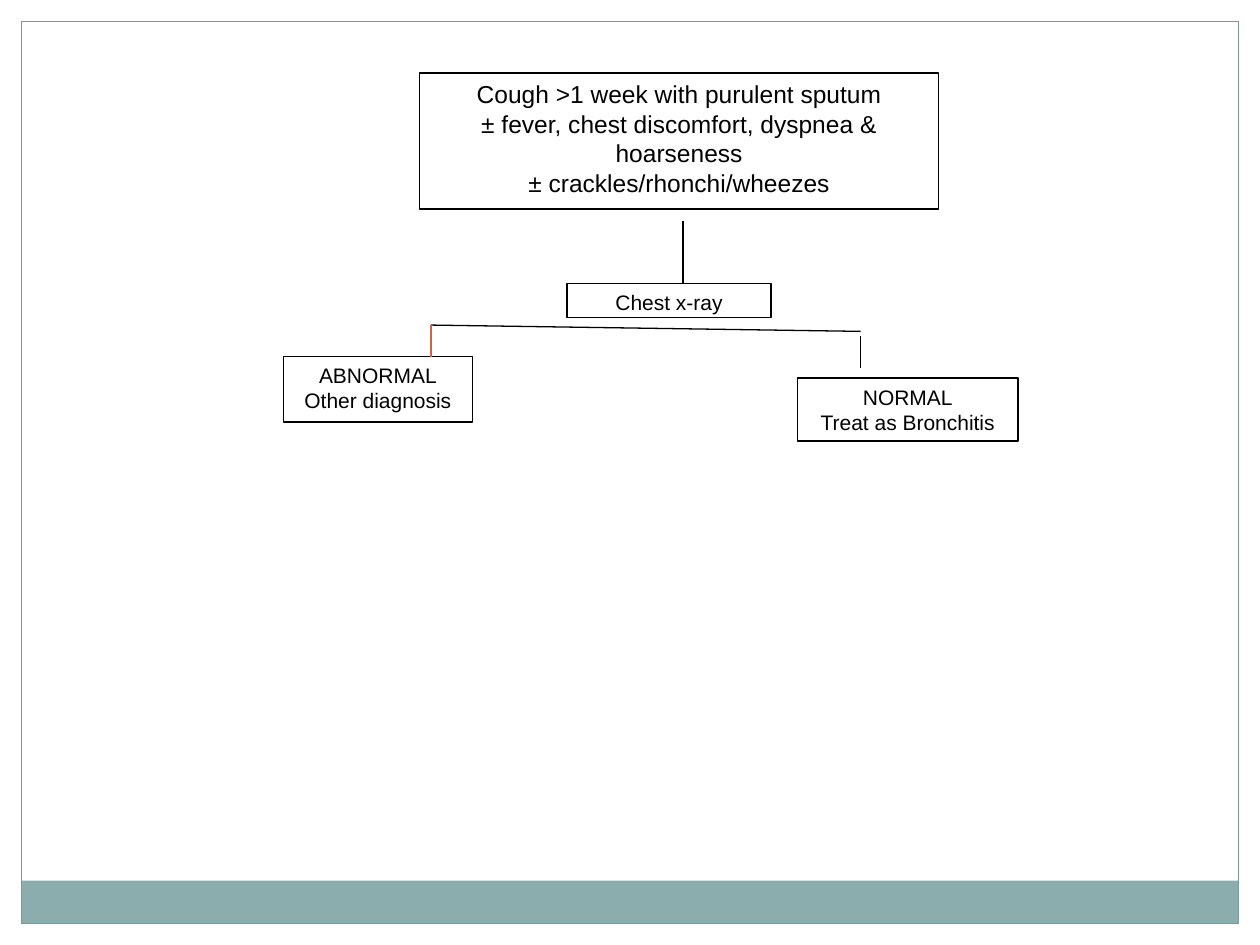
from dataclasses import dataclass

from lxml import etree
from pptx import Presentation
from pptx.dml.color import RGBColor
from pptx.enum.shapes import MSO_CONNECTOR, MSO_SHAPE
from pptx.enum.text import MSO_ANCHOR, PP_ALIGN
from pptx.oxml.ns import qn
from pptx.util import Inches, Pt

RECT = MSO_SHAPE.RECTANGLE
STRAIGHT = MSO_CONNECTOR.STRAIGHT
CENTER = PP_ALIGN.CENTER
TOP = MSO_ANCHOR.TOP


@dataclass(frozen=True)
class Theme:
    font: str = "Arial"
    ink: str = "000000"
    paper: str = "FFFFFF"
    band: str = "8CADAE"
    frame: str = "7C999A"
    accent: str = "D16349"
    heading: int = 14
    body: int = 12
    line: float = 0.75


THEME = Theme()


def add_rect(slide, box, fill=None, line=None):
    sp = slide.shapes.add_shape(RECT, *map(Inches, box))
    sp.shadow.inherit = False
    if fill:
        sp.fill.solid()
        sp.fill.fore_color.rgb = RGBColor.from_string(fill)
    else:
        sp.fill.background()
    if line:
        sp.line.color.rgb = RGBColor.from_string(line)
        sp.line.width = Pt(THEME.line)
    else:
        sp.line.fill.background()
    return sp


def add_line(slide, start, end, color=THEME.ink):
    cn = slide.shapes.add_connector(STRAIGHT, *map(Inches, (*start, *end)))
    cn.line.color.rgb = RGBColor.from_string(color)
    cn.line.width = Pt(THEME.line)
    etree.SubElement(cn._element.spPr, qn("a:effectLst"))


def write_text(sp, lines, size=THEME.body, color=THEME.ink, align=CENTER):
    tf = sp.text_frame
    tf.word_wrap = True
    tf.vertical_anchor = TOP
    for i, line in enumerate(lines):
        p = tf.paragraphs[0] if i == 0 else tf.add_paragraph()
        p.alignment = align
        r = p.add_run()
        r.text = line
        r.font.name = THEME.font
        r.font.size = Pt(size)
        r.font.color.rgb = RGBColor.from_string(color)


def draw_frame(slide, box, margin=0.17, band_height=0.34):
    x, y, w, h = box
    inner_w, inner_h = w - 2 * margin, h - 2 * margin

    # White margins
    add_rect(slide, (x, y, w, margin), THEME.paper)
    for left in (x + w - margin, x):
        add_rect(slide, (left, y, margin, h), THEME.paper)

    # Footer band and outline
    band_top = y + h - margin - band_height
    add_rect(slide, (x + margin, band_top, inner_w, band_height), THEME.band)
    add_rect(slide, (x + margin, y + margin, inner_w, inner_h), line=THEME.frame)


def draw_flowchart(slide, box):
    x, y = box[:2]

    # Steps: position within the box, lines, type size
    steps = [
        ((1.08, 0, 4.12, 1.08),
         ["Cough >1 week with purulent sputum",
          "± fever, chest discomfort, dyspnea & hoarseness",
          "± crackles/rhonchi/wheezes"], THEME.heading),
        ((2.25, 1.67, 1.62, 0.27), ["Chest x-ray"], THEME.body),
        ((0, 2.25, 1.5, 0.52), ["ABNORMAL", "Other diagnosis"], THEME.body),
        ((4.08, 2.42, 1.75, 0.5), ["NORMAL", "Treat as Bronchitis"], THEME.body),
    ]
    for (left, top, w, h), lines, size in steps:
        sp = add_rect(slide, (x + left, y + top, w, h), THEME.paper, THEME.ink)
        write_text(sp, lines, size=size)

    # Links: stem, branch, right drop, left drop
    stem, left, right = x + 3.17, x + 1.17, x + 4.58
    add_line(slide, (stem, y + 1.17), (stem, y + 1.67))
    add_line(slide, (left, y + 2), (right, y + 2.05))
    add_line(slide, (right, y + 2.09), (right, y + 2.34))
    add_line(slide, (left, y + 2), (left, y + 2.25), THEME.accent)


def main():
    prs = Presentation()
    prs.slide_width, prs.slide_height = Inches(10), Inches(7.5)
    slide = prs.slides.add_slide(prs.slide_layouts[6])
    draw_frame(slide, (0, 0, 10, 7.5))
    draw_flowchart(slide, (2.25, 0.58, 5.83, 2.92))
    prs.save("out.pptx")


if __name__ == "__main__":
    main()
